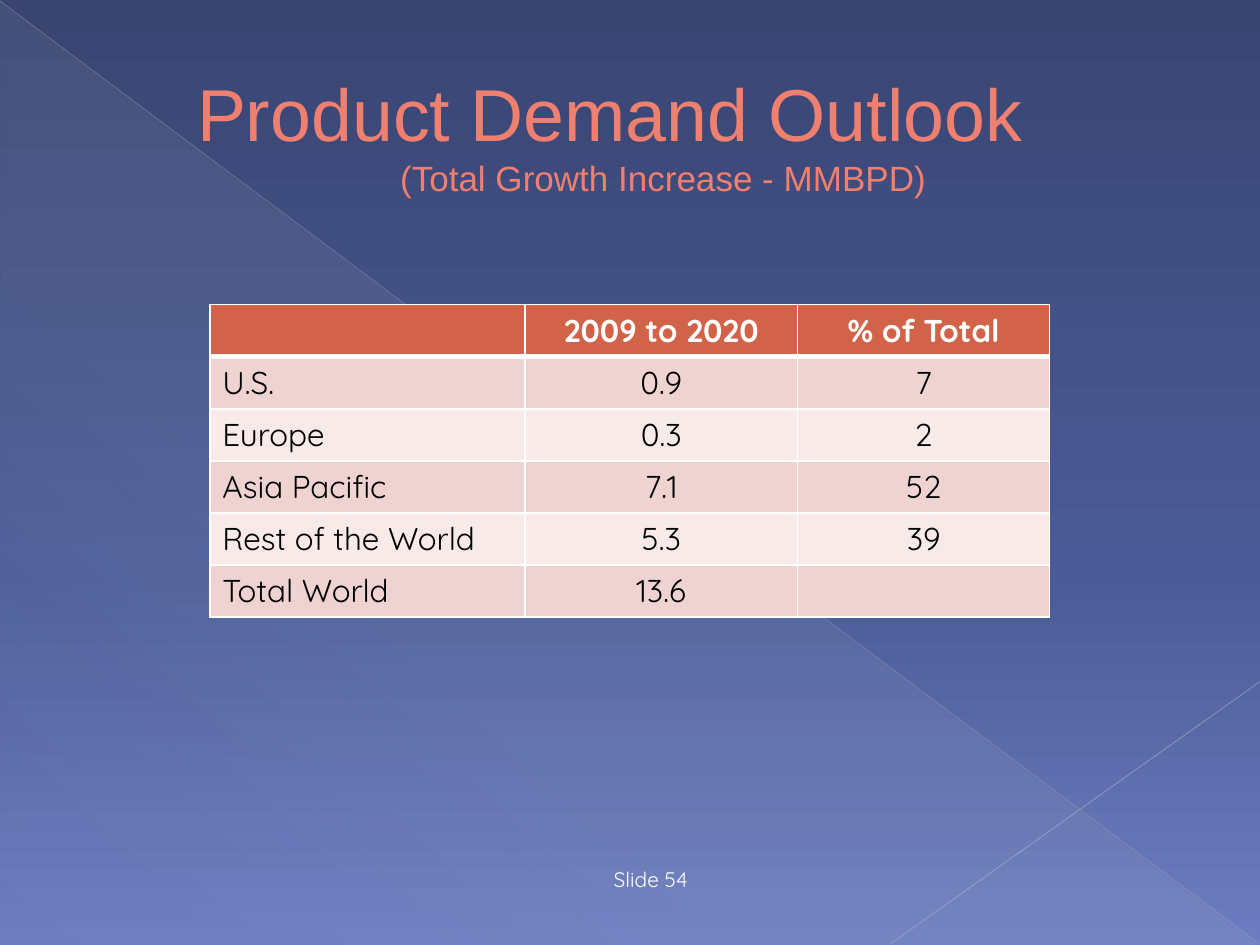
from lxml.etree import SubElement
from pptx import Presentation
from pptx.dml.color import RGBColor
from pptx.enum.shapes import MSO_CONNECTOR, MSO_SHAPE
from pptx.enum.text import MSO_ANCHOR, MSO_AUTO_SIZE, PP_ALIGN
from pptx.oxml.ns import qn
from pptx.util import Cm, Pt

SANS = "Quicksand"
WHITE = "FFFFFF"
ROWS = [
    ("", "2009 to 2020", "% of Total"),
    ("U.S.", "0.9", "7"),
    ("Europe", "0.3", "2"),
    ("Asia Pacific", "7.1", "52"),
    ("Rest of the World", "5.3", "39"),
    ("Total World", "13.6", ""),
]


def rgb(code):
    return RGBColor.from_string(code)


def tint(node, code, alpha=100):
    color = SubElement(node, qn("a:srgbClr"), val=code)
    if alpha < 100:
        SubElement(color, qn("a:alpha"), val=str(alpha * 1000))


def style(font, name, size, code, bold=False):
    font.name = name
    font.size = Pt(size)
    font.bold = bold
    font.color.rgb = rgb(code)


def blend(fill, root, stops, angle):
    fill.gradient()
    grad = root.find(".//" + qn("a:gradFill"))
    items = grad.find(qn("a:gsLst"))
    for old in list(items):
        items.remove(old)
    for place, code, alpha in stops:
        tint(SubElement(items, qn("a:gs"), pos=str(place * 1000)), code, alpha)
    grad.find(qn("a:lin")).set("ang", str(angle * 60000))


def add_wedge(slide):
    wedge = slide.shapes.add_shape(
        MSO_SHAPE.RIGHT_TRIANGLE, Cm(0.02), Cm(0.04), Cm(25.36), Cm(19)
    )
    wedge.shadow.inherit = False
    wedge.line.fill.background()
    stops = [(0, "C5D1D7", 10), (70, "C5D1D7", 8), (100, "C5D1D7", 1)]
    blend(wedge.fill, wedge.element, stops, 133)


def add_line(slide, start, end, code, width, alpha):
    line = slide.shapes.add_connector(
        MSO_CONNECTOR.STRAIGHT, *map(Cm, start + end)
    )
    line.line.width = Pt(width)
    line.line.color.rgb = rgb(code)
    props = line.element.spPr
    color = props.find(".//" + qn("a:srgbClr"))
    SubElement(color, qn("a:alpha"), val=str(alpha * 1000))
    SubElement(props, qn("a:effectLst"))


def outline(run, code, width):
    props = run._r.get_or_add_rPr()
    line = SubElement(props, qn("a:ln"), w=str(Pt(width)))
    tint(SubElement(line, qn("a:solidFill")), code)
    props.insert(0, line)


def set_title(slide):
    title = slide.shapes.title
    slide.shapes.element.append(title.element)
    title.left, title.top, title.width, title.height = map(
        Cm, (0, 0.74, 25.4, 3.89)
    )
    frame = title.text_frame
    frame.auto_size = MSO_AUTO_SIZE.NONE
    frame.vertical_anchor = MSO_ANCHOR.MIDDLE
    frame.margin_left, frame.margin_right = Cm(0.25), Cm(1.07)
    frame.text = "Product Demand Outlook\v(Total Growth Increase - MMBPD)"
    para = frame.paragraphs[0]
    para.alignment = PP_ALIGN.CENTER
    props = para._p.get_or_add_pPr()
    props.set("marL", str(Cm(2.16)))
    props.set("indent", str(Cm(-2.16)))
    for run, size in zip(para.runs, (42, 20)):
        style(run.font, "Arial", size, "EF7F6E")
        outline(run, "914533", 0.5)


def add_footer(slide):
    box = slide.shapes.add_textbox(Cm(10.16), Cm(17.27), Cm(5.92), Cm(0.84))
    frame = box.text_frame
    frame.word_wrap = True
    frame.vertical_anchor = MSO_ANCHOR.BOTTOM
    para = frame.paragraphs[0]
    para.text = "Slide 54"
    para.alignment = PP_ALIGN.CENTER
    style(para.font, SANS, 12, WHITE)


def edge(cell, top, bottom):
    props = cell._tc.get_or_add_tcPr()
    for side, width in zip("LRTB", (1, 1, top, bottom)):
        line = SubElement(props, qn("a:ln" + side), w=str(Pt(width)))
        tint(SubElement(line, qn("a:solidFill")), WHITE)


def fill_cell(cell, text, row, col):
    edge(cell, 3 if row == 1 else 1, 3 if row == 0 else 1)
    cell.fill.solid()
    band = "EED3D0" if row % 2 else "F7EAE9"
    cell.fill.fore_color.rgb = rgb(band if row else "D16349")
    cell.vertical_anchor = MSO_ANCHOR.MIDDLE
    para = cell.text_frame.paragraphs[0]
    para.text = text
    para.alignment = PP_ALIGN.CENTER if col else PP_ALIGN.LEFT
    style(para.font, SANS, 18, "000000" if row else WHITE, row == 0)


def add_grid(slide):
    table = slide.shapes.add_table(
        len(ROWS), 3, Cm(4.23), Cm(6.14), Cm(16.93), Cm(6.3)
    ).table
    for col, width in zip(table.columns, (6.35, 5.5, 5.08)):
        col.width = Cm(width)
    for row, texts in enumerate(ROWS):
        table.rows[row].height = Cm(1.05)
        for col, text in enumerate(texts):
            fill_cell(table.cell(row, col), text, row, col)


def main():
    deck = Presentation()
    deck.slide_width, deck.slide_height = Cm(25.4), Cm(19.05)
    slide = deck.slides.add_slide(deck.slide_layouts[5])
    stops = [(0, "394471", 100), (60, "4B5B97", 100), (100, "6C7CC0", 100)]
    blend(slide.background.fill, slide.element, stops, 90)
    add_wedge(slide)
    add_line(slide, (0, 0.02), (25.38, 19.02), "BABECD", 0.39, 35)
    add_line(slide, (25.4, 13.74), (17.96, 19.02), "C2C5D2", 0.47, 45)
    set_title(slide)
    add_footer(slide)
    add_grid(slide)
    deck.save("out.pptx")


if __name__ == "__main__":
    main()
